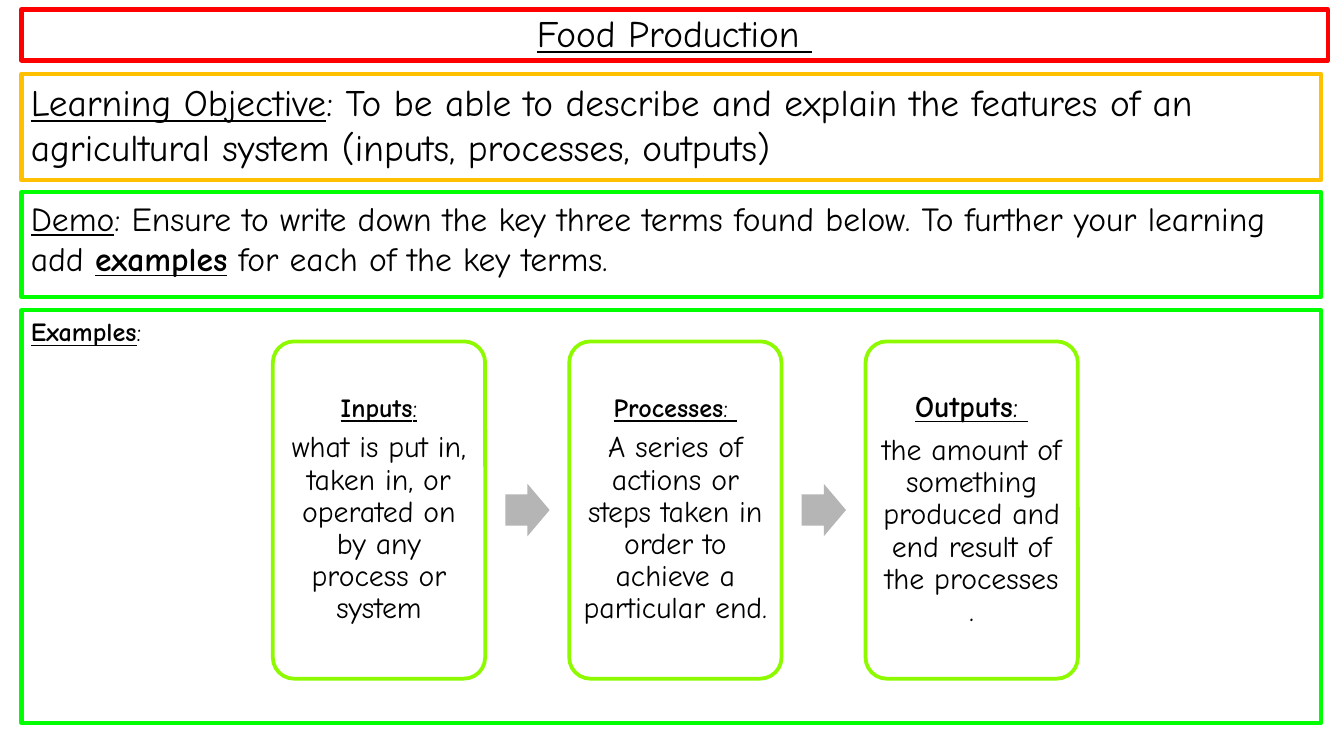
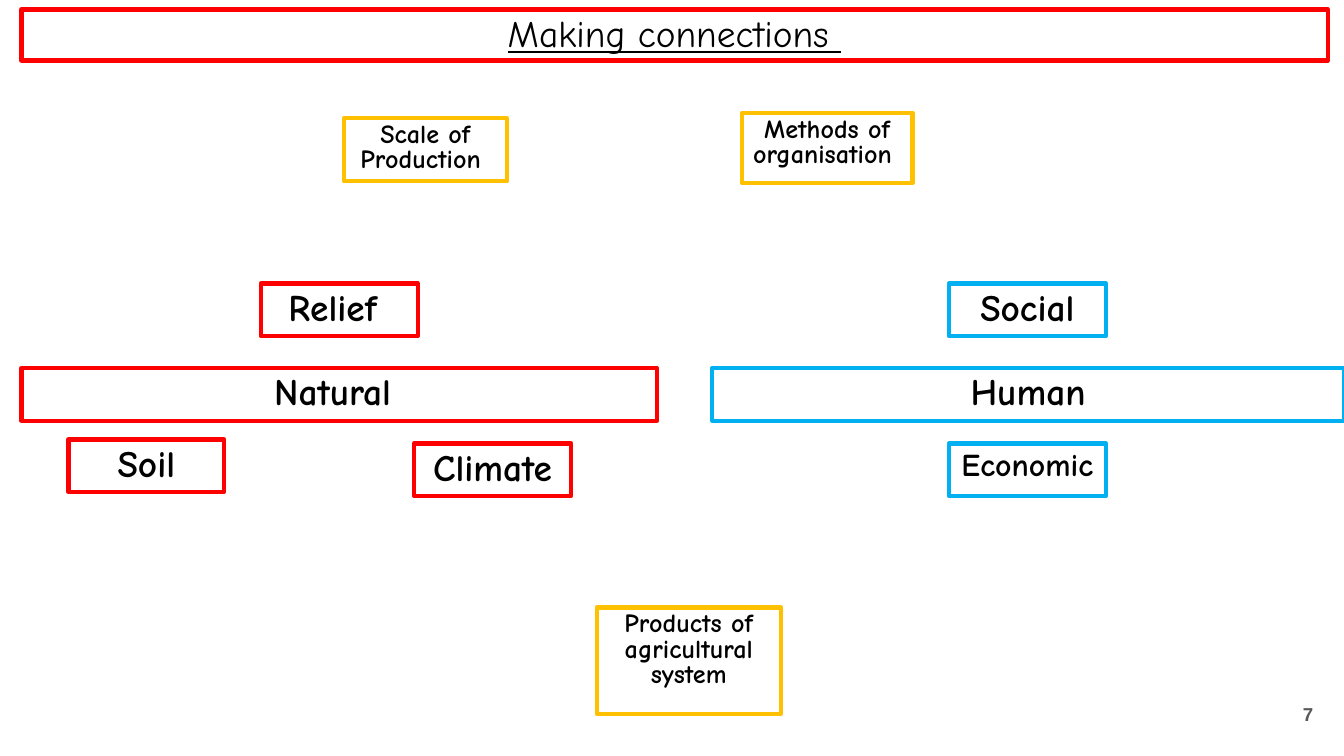
from pptx import Presentation
from pptx import util as u
from pptx.dml.color import RGBColor
from pptx.enum import shapes, text

PX = 9144  # 100 px to the inch
WIDTH, HEIGHT = 1000, 562.5
FONT = "Comic Neue"
BLACK, WHITE, GREY, ARROW = "000000", "FFFFFF", "595959", "B5B5B5"
RED, AMBER, GREEN, LIME, BLUE = "FF0000", "FFC000", "00FF00", "8EFA00", "00B0F0"
PLAIN, UNDER = {}, {"underline": True}
BOLD, STRONG = {"bold": True}, {"bold": True, "underline": True}

TITLE_AREA = (16, 7, 972, 38)
TITLES = ["Food Production ", "Making connections "]

# top, height, colour, text size, runs
PANELS = [
    (143, 78, GREEN, 18, [
        ("Demo", UNDER),
        (": Ensure to write down the key three terms found below. "
         "To further your learning add ", PLAIN),
        ("examples", STRONG),
        (" for each of the key terms.", PLAIN)]),
    (55, 79, AMBER, 20, [
        ("Learning Objective", UNDER),
        (": To be able to describe and explain the features of an "
         "agricultural system (inputs, processes, outputs)", PLAIN)]),
    (231, 307, GREEN, 14, [("Examples", STRONG), (":", PLAIN)]),
]
PANEL_LEFT, PANEL_WIDTH = 16, 967

# term, ending, heading size, inset, meaning
STAGES = [
    ("Inputs", ":", 14, 6,
     "what is put in, taken in, or operated on by any process or system"),
    ("Processes", ": ", 14, 6,
     "A series of actions or steps taken in order to achieve a particular end."),
    ("Outputs", ": ", 16, 7,
     "the amount of something produced and end result of the processes ."),
]
STAGE_LEFT, STAGE_TOP, STAGE_WIDTH, STAGE_HEIGHT = 203, 254, 158, 251
STAGES_RIGHT = 802
ARROW_WIDTH, ARROW_HEIGHT, ARROW_OFFSET = 33, 39, 173

# label, area, colour, text size, line spacing
FACTORS = [
    ("Relief ", (194, 211, 117, 39), RED, 20, 0.9),
    ("Climate", (308, 330, 117, 39), RED, 20, 0.9),
    ("Soil", (51, 327, 116, 39), RED, 20, 0.9),
    ("Economic", (706, 330, 117, 39), BLUE, 17, 0.9),
    ("Social", (706, 211, 117, 39), BLUE, 20, 0.9),
    ("Natural ", (16, 274, 473, 39), RED, 20, 0.9),
    ("Human", (530, 274, 470, 39), BLUE, 20, 0.9),
    ("Scale of Production ", (256, 88, 121, 47), AMBER, 14, 0.8),
    ("Methods of organisation ", (552, 84, 127, 52), AMBER, 14, 0.8),
    ("Products of agricultural system", (444, 452, 137, 79), AMBER, 14, 0.8),
]
PAGE_NUMBER, PAGE_NUMBER_AREA = "7", (927, 510, 60, 43)


def px(length):
    return u.Emu(round(length * PX))


def colour(value):
    return RGBColor.from_string(value)


def apply(target, formats):
    for name, value in formats.items():
        setattr(target, name, value)


def paint(box, fill=None, line=None, weight=2.25):
    if fill:
        box.fill.solid()
        box.fill.fore_color.rgb = colour(fill)
    else:
        box.fill.background()
    if line:
        box.line.color.rgb = colour(line)
        box.line.width = u.Pt(weight)
    else:
        box.line.fill.background()


def add_box(page, kind, area, fill=None, line=None, weight=2.25):
    box = page.shapes.add_shape(kind, *map(px, area))
    box.shadow.inherit = False
    paint(box, fill, line, weight)
    return box


def set_frame(box, anchor="TOP", across=7, down=4):
    apply(box.text_frame, {
        "word_wrap": True,
        "auto_size": text.MSO_AUTO_SIZE.NONE,
        "vertical_anchor": text.MSO_ANCHOR[anchor],
        "margin_left": px(across), "margin_right": px(across),
        "margin_top": px(down), "margin_bottom": px(down)})


def write(para, runs, size, align="LEFT", spacing=1.0, before=0, after=0,
          font=FONT, ink=BLACK):
    """Fill a paragraph; before and after are shares of the text size."""
    apply(para, {
        "alignment": text.PP_ALIGN[align], "line_spacing": spacing,
        "space_before": u.Pt(size * before), "space_after": u.Pt(size * after)})
    for words, formats in runs:
        span = para.add_run()
        span.text = words
        apply(span.font, {"name": font, "size": u.Pt(size), "bold": False,
                          "underline": False, **formats})
        span.font.color.rgb = colour(ink)


def add_page(deck, title):
    page = deck.slides.add_slide(deck.slide_layouts[5])
    box = page.shapes.title
    apply(box, dict(zip(("left", "top", "width", "height"), map(px, TITLE_AREA))))
    paint(box, WHITE, RED)
    set_frame(box, "MIDDLE")
    write(box.text_frame.paragraphs[0], [(title, UNDER)], 20, "CENTER", 0.9)
    return page


def add_panels(page):
    for top, height, line, size, runs in PANELS:
        area = (PANEL_LEFT, top, PANEL_WIDTH, height)
        box = add_box(page, shapes.MSO_SHAPE.RECTANGLE, area, line=line)
        set_frame(box)
        write(box.text_frame.paragraphs[0], runs, size, before=0.2)


def add_stages(page):
    pitch = (STAGES_RIGHT - STAGE_WIDTH - STAGE_LEFT) / (len(STAGES) - 1)
    arrow_top = STAGE_TOP + (STAGE_HEIGHT - ARROW_HEIGHT) / 2
    for index, (term, ending, size, inset, meaning) in enumerate(STAGES):
        left = STAGE_LEFT + index * pitch
        card = add_box(page, shapes.MSO_SHAPE.ROUNDED_RECTANGLE,
                       (left, STAGE_TOP, STAGE_WIDTH, STAGE_HEIGHT),
                       WHITE, LIME, 2)
        card.adjustments[0] = 0.1
        set_frame(card, "MIDDLE", inset, inset)
        style = {"align": "CENTER", "spacing": 0.9, "after": 0.35}
        write(card.text_frame.paragraphs[0],
              [(term, STRONG), (ending, UNDER)], size, **style)
        write(card.text_frame.add_paragraph(), [(meaning, PLAIN)], 16, **style)
        if index < len(STAGES) - 1:
            arrow = add_box(page, shapes.MSO_SHAPE.RIGHT_ARROW,
                            (left + ARROW_OFFSET, arrow_top,
                             ARROW_WIDTH, ARROW_HEIGHT), ARROW)
            arrow.adjustments[0] = 0.6
            arrow.adjustments[1] = 0.5


def add_factors(page):
    for label, area, line, size, spacing in FACTORS:
        box = add_box(page, shapes.MSO_SHAPE.RECTANGLE, area, line=line)
        set_frame(box)
        write(box.text_frame.paragraphs[0], [(label, BOLD)], size, "CENTER",
              spacing, before=0.2)


def add_page_number(page):
    box = page.shapes.add_textbox(*map(px, PAGE_NUMBER_AREA))
    set_frame(box, "MIDDLE", 10, 10)
    write(box.text_frame.paragraphs[0], [(PAGE_NUMBER, BOLD)], 10, "RIGHT",
          font="Arial", ink=GREY)


def main():
    deck = Presentation()
    deck.slide_width, deck.slide_height = px(WIDTH), px(HEIGHT)
    production, connections = [add_page(deck, title) for title in TITLES]
    add_panels(production)
    add_stages(production)
    add_factors(connections)
    add_page_number(connections)
    deck.save("out.pptx")


if __name__ == "__main__":
    main()
